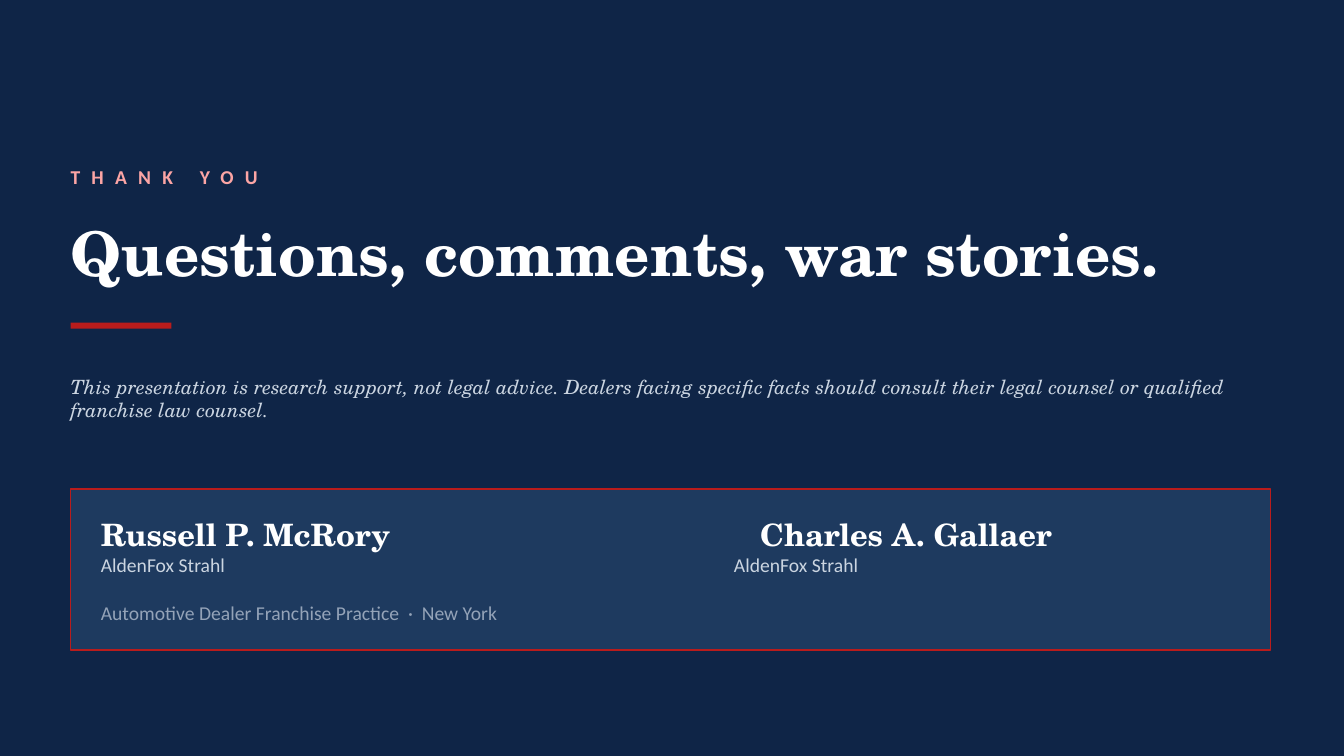
from lxml.etree import SubElement
from pptx import Presentation
from pptx.dml.color import RGBColor
from pptx.enum.shapes import MSO_SHAPE
from pptx.enum.text import MSO_ANCHOR
from pptx.oxml.ns import qn
from pptx.util import Inches, Pt

SERIF, SANS = "TeX Gyre Schola", "Calibri"
NAVY, PANEL, RED, PINK = "0F2547", "1E3A5F", "B91C1C", "FCA5A5"
WHITE, PALE, MUTED = "FFFFFF", "CBD5E1", "94A3B8"
LEFT, CARD_LEFT, CARD_TEXT_WIDTH = 0.7, 1, 11.4


def rgb(value):
    return RGBColor.from_string(value)


class ClosingSlide:
    def __init__(self, presentation):
        self.slide = presentation.slides.add_slide(presentation.slide_layouts[6])
        background = self.slide.background.fill
        background.solid()
        background.fore_color.rgb = rgb(NAVY)

    def text(self, words, left, top, width, height, size, color, font=SANS,
             bold=False, italic=False, spacing=None, tab=None):
        """Add one paragraph; spacing is in points, tab in inches."""
        box = self.slide.shapes.add_textbox(
            Inches(left), Inches(top), Inches(width), Inches(height))
        frame = box.text_frame
        frame.word_wrap = True
        frame.vertical_anchor = MSO_ANCHOR.MIDDLE
        frame.margin_left = frame.margin_right = 0
        frame.margin_top = frame.margin_bottom = 0
        paragraph = frame.paragraphs[0]
        run = paragraph.add_run()
        run.text = words
        if tab:
            stops = SubElement(paragraph._p.get_or_add_pPr(), qn("a:tabLst"))
            SubElement(stops, qn("a:tab"), pos=str(Inches(tab)), algn="l")
        if spacing:
            run._r.get_or_add_rPr().set("spc", str(spacing * 100))
        style = paragraph.font
        style.name, style.size = font, Pt(size)
        style.bold, style.italic = bold, italic
        style.color.rgb = rgb(color)

    def rectangle(self, left, top, width, height, fill, outline=None):
        shape = self.slide.shapes.add_shape(
            MSO_SHAPE.RECTANGLE,
            Inches(left), Inches(top), Inches(width), Inches(height))
        shape.shadow.inherit = False
        shape.fill.solid()
        shape.fill.fore_color.rgb = rgb(fill)
        if outline:
            shape.line.color.rgb = rgb(outline)
            shape.line.width = Pt(1)
        else:
            shape.line.fill.background()

    def card_text(self, words, top, height, size, color, **style):
        self.text(words, CARD_LEFT, top, CARD_TEXT_WIDTH, height, size, color, **style)


def main():
    presentation = Presentation()
    presentation.slide_width = Inches(13.33)
    presentation.slide_height = Inches(7.5)
    closing = ClosingSlide(presentation)

    closing.text("THANK YOU", LEFT, 1.5, 12, 0.5, 14, PINK, bold=True, spacing=8)
    closing.text("Questions, comments, war stories.", LEFT, 2, 12, 1, 44, WHITE,
                 font=SERIF, bold=True)
    closing.rectangle(LEFT, 3.2, 1, 0.06, RED)
    closing.text("This presentation is research support, not legal advice. "
                 "Dealers facing specific facts should consult their legal counsel "
                 "or qualified franchise law counsel.",
                 LEFT, 3.45, 11.8, 1, 14, PALE, font=SERIF, italic=True)

    closing.rectangle(LEFT, 4.85, 11.9, 1.6, PANEL, outline=RED)
    closing.card_text("Russell P. McRory\tCharles A. Gallaer", 5.05, 0.5, 22, WHITE,
                      font=SERIF, bold=True, tab=6.54)
    closing.card_text("\t".join(["AldenFox Strahl"] * 2), 5.43, 0.35, 14, PALE, tab=6.28)
    closing.card_text("Automotive Dealer Franchise Practice\u00a0 ·\u00a0 New York".replace("\u00a0", " "),
                      5.9, 0.35, 14, MUTED)
    presentation.save("out.pptx")


if __name__ == "__main__":
    main()
